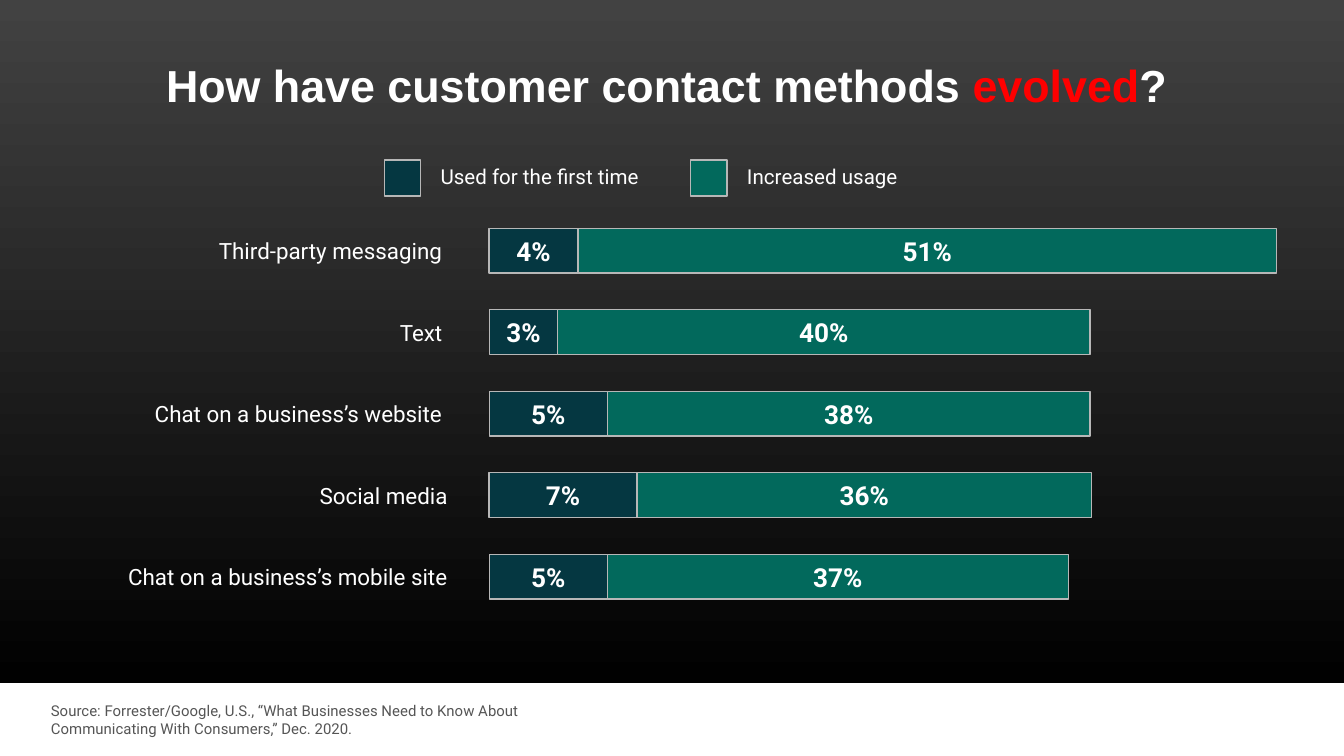
import pptx
import pptx.util
import pptx.dml.color
import pptx.enum.shapes
import pptx.enum.text

COLORS = {
    "panel_top": "424242", "panel_bottom": "010101",
    "first_time": "053741", "increased": "02695C", "outline": "B7B7B7",
    "white": "FFFFFF", "red": "FF0000", "source": "555555",
}
ALIGN = pptx.enum.text.PP_ALIGN
ANCHOR = pptx.enum.text.MSO_ANCHOR
rgb = {name: pptx.dml.color.RGBColor.from_string(c) for name, c in COLORS.items()}

prs = pptx.Presentation()
prs.slide_width = pptx.util.Inches(10)
prs.slide_height = pptx.util.Inches(5.625)
COL = prs.slide_width / 100
ROW = prs.slide_height / 100
s = prs.slides.add_slide(prs.slide_layouts[5])


def add_box(left, top, width, height, fill=None):
    """Add a text box, or an outlined rectangle if a fill is named, in grid units."""
    at = [int(v) for v in (left * COL, top * ROW, width * COL, height * ROW)]
    if fill is None:
        return s.shapes.add_textbox(*at)
    sp = s.shapes.add_shape(pptx.enum.shapes.MSO_SHAPE.RECTANGLE, *at)
    sp.shadow.inherit = False
    sp.fill.solid()
    sp.fill.fore_color.rgb = rgb[fill]
    sp.line.color.rgb = rgb["outline"]
    sp.line.width = pptx.util.Pt(0.75)
    return sp


def write(sp, parts, size, align=ALIGN.LEFT, bold=False, font="Roboto", anchor=ANCHOR.MIDDLE):
    """Fill a shape with one paragraph of (text, colour name) runs."""
    tf = sp.text_frame
    tf.word_wrap = True
    tf.auto_size = pptx.enum.text.MSO_AUTO_SIZE.NONE
    tf.vertical_anchor = anchor
    tf.margin_left = tf.margin_right = pptx.util.Inches(0.1)
    tf.margin_top = tf.margin_bottom = pptx.util.Inches(0.1)
    p = tf.paragraphs[0]
    p.alignment = align
    for text, color in parts:
        r = p.add_run()
        r.text = text
        r.font.name = font
        r.font.size = pptx.util.Pt(size)
        r.font.bold = bold
        r.font.color.rgb = rgb[color]


# Dark panel above the white footer
panel = add_box(0, 0, 100, 90.31, "panel_top")
panel.line.fill.background()
panel.fill.gradient()
panel.fill.gradient_angle = 270
for stop, name in zip(panel.fill.gradient_stops, ("panel_top", "panel_bottom")):
    stop.color.rgb = rgb[name]

# Title, brought in front of the panel
title = s.shapes.title
title.left, title.top = int(5 * COL), int(4.09 * ROW)
title.width, title.height = int(90.1 * COL), int(14.22 * ROW)
write(title, [("How have customer contact methods ", "white"), ("evolved", "red"), ("? ", "white")],
      24, ALIGN.CENTER, bold=True, font="Arial")
panel._element.addnext(title._element)

# Legend
for left, width, text, color in [
    (28.6, 19.6, "Used for the first time", "first_time"),
    (51.4, 23, "Increased usage", "increased"),
]:
    add_box(left, 21.16, 2.7, 4.8, color)
    write(add_box(left + 3.2, 20.44, width, 5.69), [(text, "white")], 11)

# Bars: label, label left, first-time %, its width, increased %, its width
BAR_LEFT, BAR_TOP, BAR_HEIGHT, BAR_STEP = 36.4, 30.2, 5.92, 10.78
bars = [
    ("Third-party messaging", 6.8, 4, 6.6, 51, 52),
    ("Text", 6.8, 3, 5.1, 40, 39.6),
    ("Chat on a business’s website", 6.8, 5, 8.8, 38, 35.9),
    ("Social media", 7.2, 7, 11, 36, 33.8),
    ("Chat on a business’s mobile site", 7.2, 5, 8.8, 37, 34.3),
]
for i, (label, label_left, first, first_width, more, more_width) in enumerate(bars):
    top = BAR_TOP + i * BAR_STEP
    write(add_box(label_left, top, 27.1, BAR_HEIGHT), [(label, "white")], 12, ALIGN.RIGHT)
    for left, width, value, color in [
        (BAR_LEFT + first_width, more_width, more, "increased"),
        (BAR_LEFT, first_width, first, "first_time"),
    ]:
        sp = add_box(left, top, width, BAR_HEIGHT, color)
        write(sp, [(f"{value}%", "white")], 14, ALIGN.CENTER, bold=True)

# Source line
source = ("Source: Forrester/Google, U.S., “What Businesses Need to Know About "
          "Communicating With Consumers,” Dec. 2020.")
write(add_box(2.8, 91.02, 43.1, 8.36), [(source, "source")], 8, anchor=ANCHOR.TOP)

prs.save("out.pptx")
